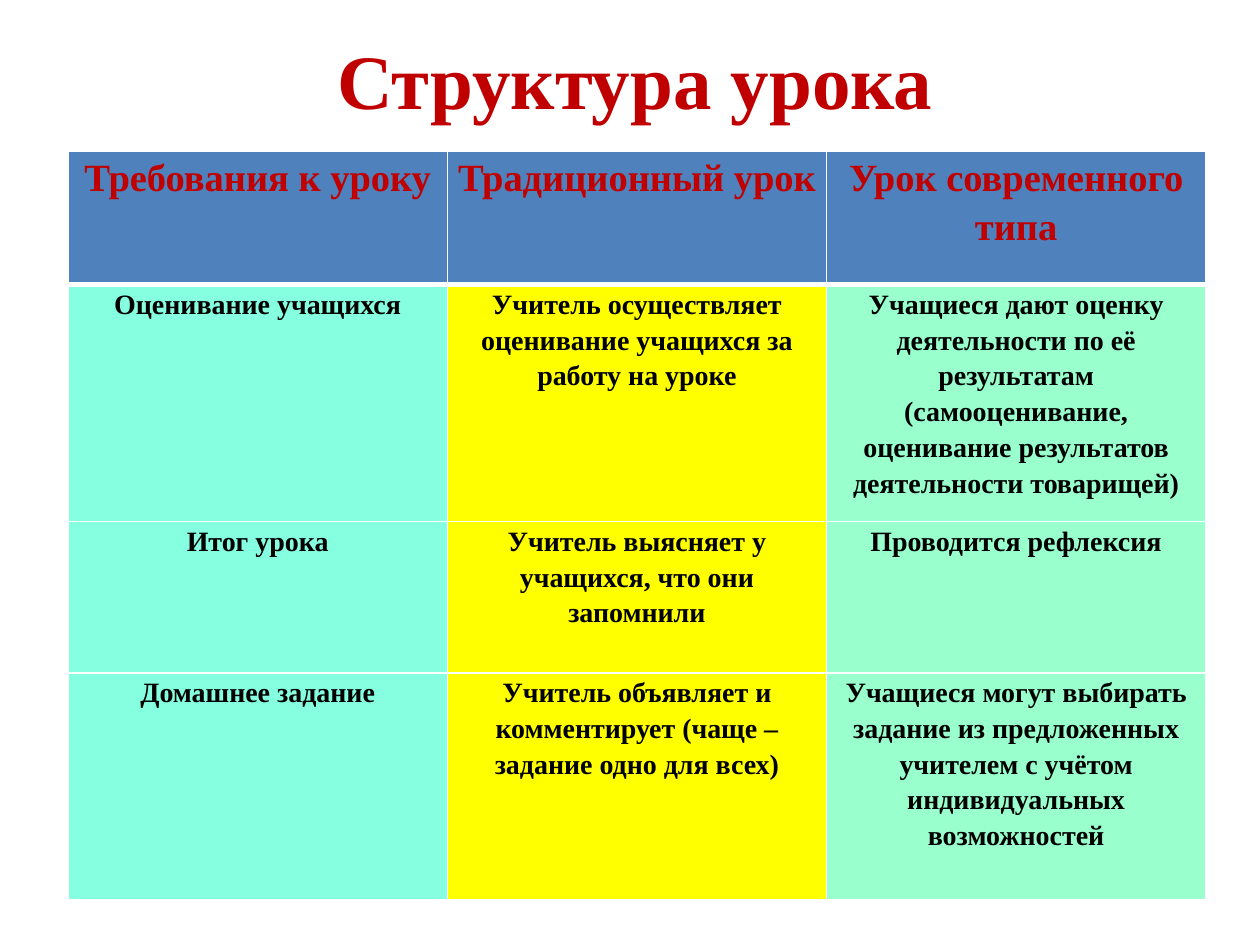
from dataclasses import dataclass

from lxml import etree
from pptx import Presentation
from pptx.dml.color import RGBColor
from pptx.enum.text import MSO_ANCHOR, PP_ALIGN
from pptx.oxml.ns import qn
from pptx.util import Inches, Pt

CENTER = PP_ALIGN.CENTER
MIDDLE = MSO_ANCHOR.MIDDLE
FONT = "Times New Roman"
RED, BLACK, WHITE, BLUE = "C00000", "000000", "FFFFFF", "4F81BD"
COLUMN_FILLS = ("85FFE0", "FFFF00", "99FFCC")
COLUMN_WIDTH = 3.01


@dataclass
class Row:
    height: float
    texts: tuple[str, str, str]
    fills: tuple[str, str, str] = COLUMN_FILLS
    size: int = 16
    color: str = BLACK
    top: int = 1
    bottom: int = 1


ROWS = [
    Row(1.06, ("Требования к уроку", "Традиционный урок", "Урок современного типа"),
        fills=(BLUE,) * 3, size=22, color=RED, bottom=3),
    Row(1.88, ("Оценивание учащихся",
               "Учитель осуществляет оценивание учащихся за работу на уроке",
               "Учащиеся дают оценку деятельности по её результатам "
               "(самооценивание, оценивание результатов деятельности товарищей)"),
        top=3),
    Row(1.2, ("Итог урока",
              "Учитель выясняет у учащихся, что они запомнили",
              "Проводится рефлексия")),
    Row(1.8, ("Домашнее задание",
              "Учитель объявляет и комментирует (чаще – задание одно для всех)",
              "Учащиеся могут выбирать задание из предложенных учителем "
              "с учётом индивидуальных возможностей")),
]


def rgb(value: str) -> RGBColor:
    return RGBColor.from_string(value)


def write(p, text: str, size: int, color: str) -> None:
    p.text = text
    p.alignment = CENTER
    p.font.name = FONT
    p.font.size = Pt(size)
    p.font.bold = True
    p.font.color.rgb = rgb(color)


def add_border(cell, side: str, width: int) -> None:
    tcPr = cell._tc.get_or_add_tcPr()
    ln = etree.SubElement(tcPr, qn(f"a:ln{side}"), w=str(Pt(width)))
    fill = etree.SubElement(ln, qn("a:solidFill"))
    etree.SubElement(fill, qn("a:srgbClr"), val=WHITE)


def fill_cell(cell, text: str, fill: str, row: Row) -> None:
    for side, width in (("L", 1), ("R", 1), ("T", row.top), ("B", row.bottom)):
        add_border(cell, side, width)
    cell.fill.solid()
    cell.fill.fore_color.rgb = rgb(fill)
    cell.margin_left = cell.margin_right = Inches(0.07)
    cell.margin_top = cell.margin_bottom = 0
    p = cell.text_frame.paragraphs[0]
    write(p, text, row.size, row.color)
    p.line_spacing = 1.15
    p.space_after = Pt(10)
    pPr = p._p.get_or_add_pPr()
    pPr.set("marL", "0")
    pPr.set("indent", str(Inches(-0.1)))


def add_title(s, text: str) -> None:
    sp = s.shapes.add_textbox(Inches(0.54), 0, Inches(9), Inches(1.25))
    tf = sp.text_frame
    tf.word_wrap = True
    tf.vertical_anchor = MIDDLE
    write(tf.paragraphs[0], text, 44, RED)


def add_lesson_table(s, rows: list[Row]) -> None:
    columns = len(COLUMN_FILLS)
    table = s.shapes.add_table(
        len(rows), columns, Inches(0.54), Inches(1.2),
        Inches(COLUMN_WIDTH * columns), Inches(sum(r.height for r in rows))).table
    for column in table.columns:
        column.width = Inches(COLUMN_WIDTH)
    for i, row in enumerate(rows):
        table.rows[i].height = Inches(row.height)
        for j, (text, fill) in enumerate(zip(row.texts, row.fills)):
            fill_cell(table.cell(i, j), text, fill, row)


def main() -> None:
    prs = Presentation()
    prs.slide_width, prs.slide_height = Inches(10), Inches(7.5)
    s = prs.slides.add_slide(prs.slide_layouts[6])

    # Heading
    add_title(s, "Структура урока")

    # Comparison of lesson types
    add_lesson_table(s, ROWS)

    prs.save("out.pptx")


if __name__ == "__main__":
    main()
